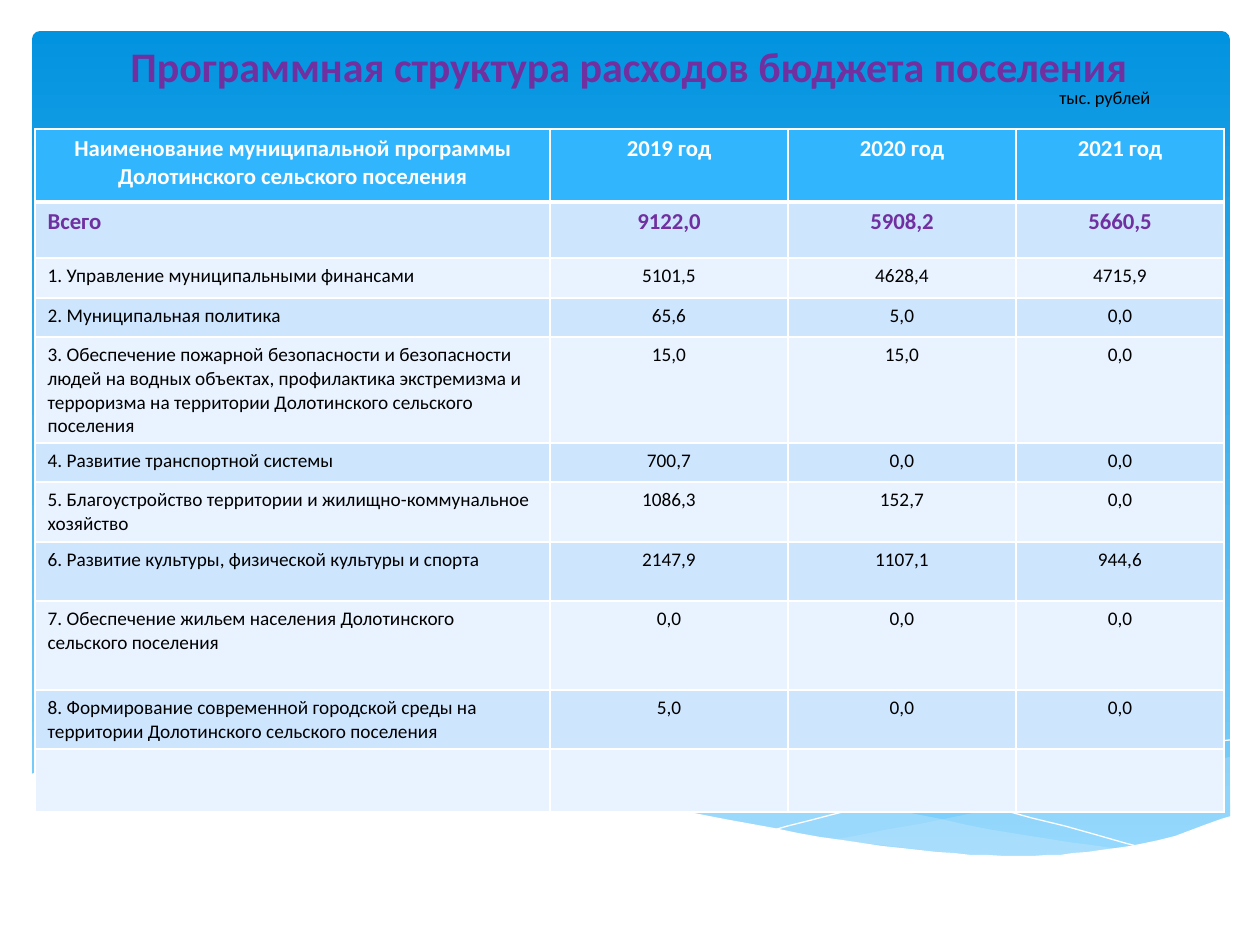
from dataclasses import dataclass

from lxml import etree
from pptx import Presentation
from pptx import util as u
from pptx.dml.color import RGBColor
from pptx.enum import shapes, text
from pptx.oxml import ns

EMU = 914400 / 126  # one px


def px(n):
    return u.Emu(round(n * EMU))


@dataclass(frozen=True)
class Theme:
    font: str = "Calibri"
    white: str = "FFFFFF"
    black: str = "000000"
    accent: str = "7030A0"
    head: str = "31B6FD"
    bands: tuple = ("CEE5FE", "E8F3FF")
    sky: tuple = ("0293E0", "83D3FE")
    wave: str = "C6E7FC"
    title: float = 24
    strong: float = 13
    body: float = 11
    note: float = 10.5


def smooth(knots, steps=5):
    """Catmull-Rom curve through the knots."""
    ends = [knots[0], *knots, knots[-1]]
    curve = [knots[0]]
    for a, b, c, d in zip(ends, ends[1:], ends[2:], ends[3:]):
        for i in range(1, steps + 1):
            t = i / steps
            curve.append(tuple(
                (2 * q + (r - p) * t + (2 * p - 5 * q + 4 * r - s) * t ** 2
                 + (3 * q - p - 3 * r + s) * t ** 3) / 2
                for p, q, r, s in zip(a, b, c, d)))
    return curve


class Painter:
    def __init__(self, slide, theme):
        self.slide, self.theme = slide, theme

    def paint(self, fill, color, alpha=None):
        fill.solid()
        fill.fore_color.rgb = RGBColor.from_string(color)
        if alpha:
            tone = fill._xPr.find(".//" + ns.qn("a:srgbClr"))
            etree.SubElement(tone, ns.qn("a:alpha"), val=str(alpha * 1000))

    def style(self, para, size, color, bold=False, center=False):
        para.alignment = text.PP_ALIGN.CENTER if center else text.PP_ALIGN.LEFT
        for run in para.runs:
            run.font.name, run.font.size = self.theme.font, u.Pt(size)
            run.font.bold = bold
            run.font.color.rgb = RGBColor.from_string(color)

    def panel(self, x, y, w, h, round_by):
        box = self.slide.shapes.add_shape(
            shapes.MSO_SHAPE.ROUNDED_RECTANGLE, px(x), px(y), px(w), px(h))
        box.adjustments[0] = round_by
        box.shadow.inherit = False
        box.line.fill.background()
        box.fill.gradient()
        box.fill.gradient_angle = 270
        for stop, color, place in zip(box.fill.gradient_stops, self.theme.sky, (0, 1)):
            stop.color.rgb = RGBColor.from_string(color)
            stop.position = place

    def curve(self, points, color, alpha=None, closed=True):
        pen = self.slide.shapes.build_freeform(*map(round, points[0]), scale=EMU)
        pen.add_line_segments([tuple(map(round, p)) for p in points[1:]], close=closed)
        shape = pen.convert_to_shape()
        shape.shadow.inherit = False
        if closed:
            self.paint(shape.fill, color, alpha)
            shape.line.fill.background()
        else:
            shape.fill.background()
            shape.line.color.rgb = RGBColor.from_string(color)
            shape.line.width = 0

    def label(self, x, y, w, h, words, size, color, **look):
        frame = self.slide.shapes.add_textbox(px(x), px(y), px(w), px(h)).text_frame
        frame.word_wrap = True
        frame.text = words
        self.style(frame.paragraphs[0], size, color, **look)

    def border(self, cell, **widths):
        props = cell._tc.get_or_add_tcPr()
        for at, (side, width) in enumerate(widths.items()):
            line = etree.Element(ns.qn("a:" + side), w=str(u.Pt(width)))
            fill = etree.SubElement(line, ns.qn("a:solidFill"))
            etree.SubElement(fill, ns.qn("a:srgbClr"), val=self.theme.white)
            props.insert(at, line)

    def table(self, x, y, cols, rows, data):
        look = self.theme
        grid = self.slide.shapes.add_table(
            len(rows), len(cols), px(x), px(y), px(sum(cols)), px(sum(rows))).table
        for col, width in zip(grid.columns, cols):
            col.width = px(width)
        for r, (height, words) in enumerate(zip(rows, data)):
            grid.rows[r].height = px(height)
            tone = look.bands[(r - 1) % 2] if r else look.head
            ink = (look.white, look.accent)[r] if r < 2 else look.black
            size = look.strong if r < 2 else look.body
            for c, word in enumerate(words):
                cell = grid.cell(r, c)
                self.paint(cell.fill, tone)
                self.border(cell, lnL=1, lnR=1, lnT=3 if r == 1 else 1,
                            lnB=1 if r else 3)
                if word:
                    cell.text_frame.text = word
                    self.style(cell.text_frame.paragraphs[0], size, ink,
                               bold=r < 2, center=r == 0 or c > 0)


# Wave outlines, in px
CREST = [(1230, 757), (1086, 788), (983, 811), (834, 840)]
BELLY = [(834, 840), (906, 848), (985, 856), (1040, 856), (1100, 852),
         (1162, 840), (1231, 818)]
UPPER = [(1126, 850), (1018, 834), (891, 809), (794, 786), (683, 761),
         (586, 747), (479, 740), (413, 742), (362, 747)]
LOWER = [(362, 747), (457, 761), (567, 786), (668, 809), (780, 832),
         (877, 847), (975, 856), (1057, 857), (1126, 850)]
FALL = [(391, 752), (457, 743), (525, 742), (616, 746), (733, 758),
        (877, 782), (1003, 810), (1144, 848)]
RISE = [(774, 830), (877, 803), (979, 779), (1092, 756), (1166, 746), (1230, 740)]
SHORE = [(1231, 816), (1159, 840), (1087, 852), (1019, 856), (937, 852),
         (842, 840), (730, 820), (634, 800), (563, 784), (460, 761), (368, 746),
         (266, 738), (184, 739), (119, 747), (65, 760), (29, 775)]

COLS = [515, 238, 228, 208]
ROWS = [73, 56, 40, 39, 106, 39, 60, 59, 89, 59, 63]
DATA = [
    ("Наименование муниципальной программы Долотинского сельского поселения",
     "2019 год", "2020 год", "2021 год"),
    ("Всего", "9122,0", "5908,2", "5660,5"),
    ("1. Управление муниципальными финансами", "5101,5", "4628,4", "4715,9"),
    ("2. Муниципальная политика", "65,6", "5,0", "0,0"),
    ("3. Обеспечение пожарной безопасности и безопасности людей на водных "
     "объектах, профилактика экстремизма и терроризма на территории "
     "Долотинского сельского поселения", "15,0", "15,0", "0,0"),
    ("4. Развитие транспортной системы", "700,7", "0,0", "0,0"),
    ("5. Благоустройство территории и жилищно-коммунальное хозяйство",
     "1086,3", "152,7", "0,0"),
    ("6. Развитие культуры, физической культуры и спорта",
     "2147,9", "1107,1", "944,6"),
    ("7. Обеспечение жильем населения Долотинского сельского поселения",
     "0,0", "0,0", "0,0"),
    ("8. Формирование современной городской среды на территории "
     "Долотинского сельского поселения", "5,0", "0,0", "0,0"),
    ("",) * 4,
]


def main():
    deck = Presentation()
    deck.slide_width, deck.slide_height = px(1260), px(945)
    look = Theme()
    art = Painter(deck.slides.add_slide(deck.slide_layouts[6]), look)

    # Backdrop with waves
    art.panel(32, 31, 1198, 832, 0.01)
    art.curve(smooth(CREST) + smooth(BELLY), look.wave, 29)
    art.curve(smooth(UPPER) + smooth(LOWER), look.wave, 40)
    for line in (FALL, RISE):
        art.curve(smooth(line), look.white, closed=False)
    art.curve(smooth(SHORE) + [(29, 921), (1231, 921)], look.white)

    # Title, table and unit note
    art.label(54, 34, 1150, 63, "Программная структура расходов бюджета поселения",
              look.title, look.accent, bold=True, center=True)
    art.table(35, 129, COLS, ROWS, DATA)
    art.label(1047, 80, 159, 35, "тыс. рублей", look.note, look.black)

    deck.save("out.pptx")


if __name__ == "__main__":
    main()
